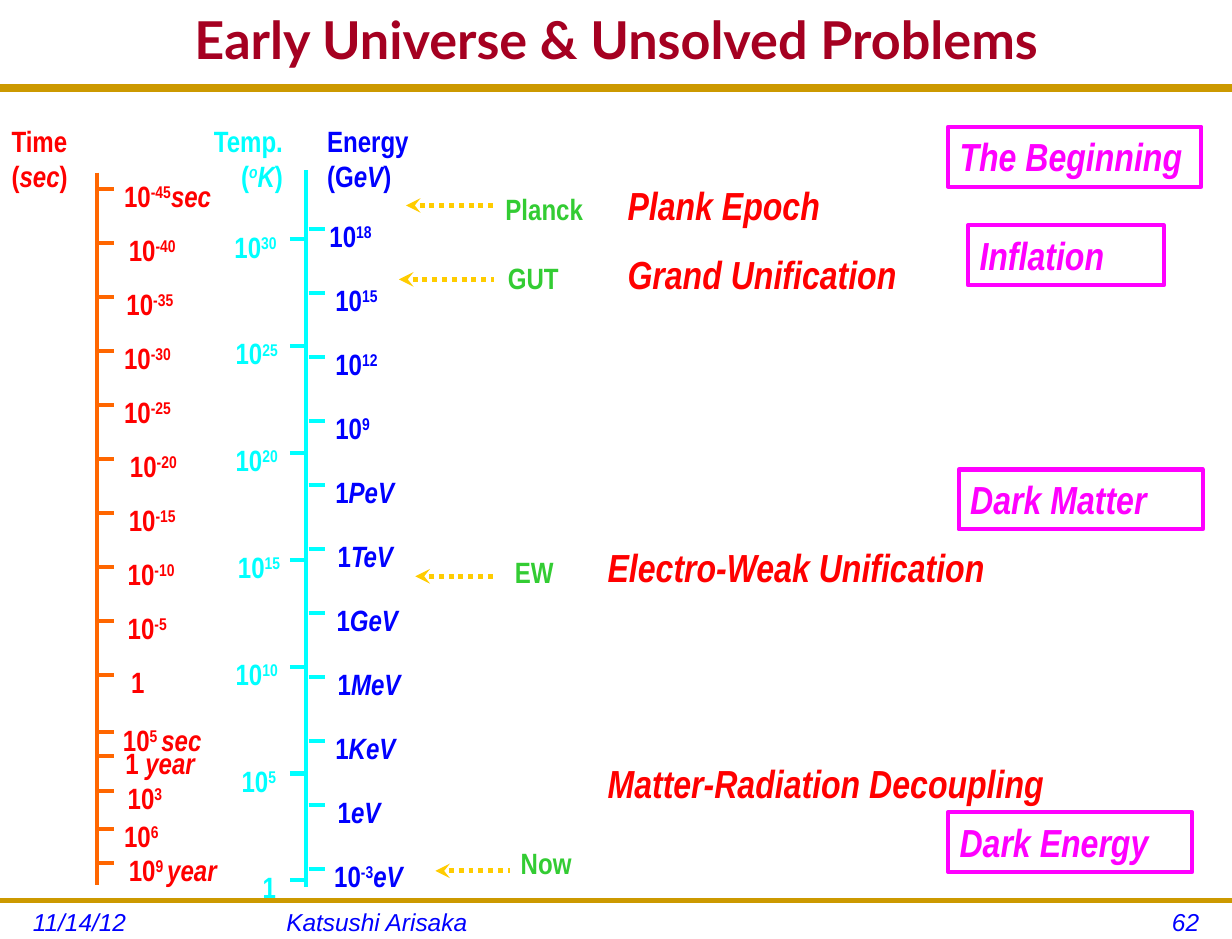
from dataclasses import dataclass

from lxml.etree import SubElement
from pptx import Presentation
from pptx.dml.color import RGBColor
from pptx.enum.dml import MSO_LINE
from pptx.enum.shapes import MSO_CONNECTOR, MSO_SHAPE
from pptx.enum.text import MSO_ANCHOR, MSO_AUTO_SIZE, PP_ALIGN
from pptx.oxml.ns import qn
from pptx.util import Inches, Pt


@dataclass(frozen=True)
class Theme:
    """Colours, fonts and type sizes of the slide."""
    rule: str = "CC9900"
    title: str = "A50021"
    footer: str = "0000FF"
    time: str = "FF0000"
    time_axis: str = "FF6600"
    temperature: str = "00FFFF"
    energy: str = "0000FF"
    arrow: str = "FFCC00"
    marker: str = "33CC33"
    epoch: str = "FF0000"
    problem: str = "FF00FF"
    title_font: str = "Lato"
    footer_font: str = "Arial"
    label_font: str = "Arial Narrow"
    title_size: float = 32
    footer_size: float = 15
    label_size: float = 18
    epoch_size: float = 24
    axis_width: float = 2.5


@dataclass(frozen=True)
class Box:
    """A region in inches, with places measured from its corner."""
    left: float
    top: float
    width: float
    height: float

    def at(self, x, y, width, height):
        """Return a smaller box at an offset inside this one."""
        return Box(self.left + x, self.top + y, width, height)

    def lengths(self):
        """Return left, top, width and height as slide lengths."""
        return [Inches(v) for v in (self.left, self.top, self.width, self.height)]


THEME = Theme()
LABEL_RISE = 0.14
TICK = 0.14


def format_run(run, size, font, color, bold=True, italic=False):
    """Set the type of one run."""
    run.font.size = Pt(size)
    run.font.name = font
    run.font.bold = bold
    run.font.italic = italic
    run.font.color.rgb = RGBColor.from_string(color)


def set_margins(frame, side=0.1):
    """Set wrapping and inner margins of a text frame."""
    frame.word_wrap = True
    frame.margin_left = frame.margin_right = Inches(side)
    frame.margin_top = frame.margin_bottom = Inches(0.05)


def add_label(slide, box, lines, color, align=PP_ALIGN.LEFT):
    """Add a label whose parts split at |, with ^ for raised and _ for italic."""
    frame = slide.shapes.add_textbox(*box.lengths()).text_frame
    set_margins(frame)
    frame.auto_size = MSO_AUTO_SIZE.SHAPE_TO_FIT_TEXT
    frame.text = "\n".join(lines)
    for paragraph, line in zip(frame.paragraphs, lines):
        paragraph.text = ""
        paragraph.alignment = align
        for part in line.split("|"):
            run = paragraph.add_run()
            run.text = part.lstrip("^_")
            format_run(run, THEME.label_size, THEME.label_font, color, italic="_" in part)
            if "^" in part:
                run.font._element.set("baseline", "30000")


def add_line(slide, box, color, width):
    """Add a straight line from the box's corner to its opposite corner."""
    left, top, across, down = box.lengths()
    line = slide.shapes.add_connector(
        MSO_CONNECTOR.STRAIGHT, left, top, left + across, top + down)
    line.line.color.rgb = RGBColor.from_string(color)
    line.line.width = Pt(width)
    SubElement(line._element.spPr, qn("a:effectLst"))
    return line


def add_heading(slide, box, text):
    """Place the title with the rule under it."""
    title = slide.shapes.title
    title.left, title.top, title.width, title.height = box.at(0.17, 0, 10.17, 0.75).lengths()
    frame = title.text_frame
    frame.text = text
    set_margins(frame, 0.11)
    frame.vertical_anchor = MSO_ANCHOR.MIDDLE
    paragraph = frame.paragraphs[0]
    paragraph.alignment = PP_ALIGN.CENTER
    paragraph.line_spacing = 0.8
    format_run(paragraph.runs[0], THEME.title_size, THEME.title_font, THEME.title)
    add_line(slide, box.at(0, box.height, box.width, 0), THEME.rule, 4.5)


def add_footer(slide, box, date, author, number):
    """Place the bottom rule with date, author and page number."""
    add_line(slide, box.at(0, 0, box.width, 0), THEME.rule, 3)
    for text, x, width, align in ((date, 0.17, 2.08, PP_ALIGN.LEFT),
                                  (author, 2.33, 6.08, PP_ALIGN.LEFT),
                                  (number, 8.5, 1.83, PP_ALIGN.RIGHT)):
        frame = slide.shapes.add_textbox(*box.at(x, 0.01, width, 0.32).lengths()).text_frame
        frame.text = text
        set_margins(frame, 0.11)
        frame.paragraphs[0].alignment = align
        format_run(frame.paragraphs[0].runs[0], THEME.footer_size, THEME.footer_font,
                   THEME.footer, bold=False, italic=True)


def add_ticks(slide, box, axis_x, offsets, rows, width, line_color, text_color):
    """Place one tick and one label for each (text, label x) row."""
    for y, (text, label_x) in zip(offsets, rows):
        add_line(slide, box.at(axis_x, y, TICK, 0), line_color, THEME.axis_width)
        add_label(slide, box.at(label_x, y - LABEL_RISE, width, 0.4), [text], text_color)


def add_time_scale(slide, box):
    """Draw the time axis with even decades, then the later ages."""
    add_label(slide, box.at(0, 0, 0.92, 0.7), ["Time", "(|_sec|)"], THEME.time)
    add_line(slide, box.at(0.83, 0.47, 0, 6.07), THEME.time_axis, THEME.axis_width)
    offsets = [0.61 + 0.46 * i for i in range(10)] + [5.24, 5.44, 5.74, 6.06, 6.35]
    rows = [("10|^-45|_sec", 0.96), ("10|^-40", 1), ("10|^-35", 0.98), ("10|^-30", 0.96),
            ("10|^-25", 0.96), ("10|^-20", 1.01), ("10|^-15", 1), ("10|^-10", 0.99),
            ("10|^-5", 0.99), ("1", 1.02), ("10|^5 |_sec", 0.95), ("1 |_year", 0.97),
            ("10|^3", 0.99), ("10|^6", 0.96), ("10|^9 |_year", 1)]
    add_ticks(slide, box, 0.83, offsets, rows, 1.13, THEME.time_axis, THEME.time)


def add_energy_scale(slide, box):
    """Draw the shared axis with temperature at its left and energy at its right."""
    axis_x = 1.11
    add_label(slide, box.at(0, 0, 1.01, 0.7), ["Temp.", "(|^_o|_K|)"],
              THEME.temperature, PP_ALIGN.RIGHT)
    add_label(slide, box.at(1.19, 0, 1.13, 0.7), ["Energy", "(G|_eV|)"], THEME.energy)
    add_line(slide, box.at(axis_x, 0.45, 0, 6.11), THEME.temperature, THEME.axis_width)
    energies = [("10|^18", 1.21), ("10|^15", 1.26), ("10|^12", 1.26), ("10|^9", 1.26),
                ("1|_PeV", 1.26), ("1|_TeV", 1.28), ("1|_GeV", 1.27), ("1|_MeV", 1.28),
                ("1|_KeV", 1.26), ("1|_eV", 1.28), ("10|^-3|_eV", 1.25)]
    add_ticks(slide, box, axis_x + 0.02, [0.95 + 0.545 * i for i in range(len(energies))],
              energies, 1.04, THEME.temperature, THEME.energy)
    temperatures = [("10|^30", 0.4), ("10|^25", 0.41), ("10|^20", 0.41), ("10|^15", 0.43),
                    ("10|^10", 0.41), ("10|^5", 0.46), ("1", 0.64)]
    add_ticks(slide, box, axis_x - TICK, [1.04 + 0.91 * i for i in range(len(temperatures))],
              temperatures, 0.78, THEME.temperature, THEME.temperature)


def add_markers(slide, box):
    """Place the dotted arrows that point at the scale, with their names."""
    for name, arrow_x, arrow_y, length, name_x, name_y in (
            ("Planck", 0.06, 0.75, 0.75, 0.81, 0.58), ("GUT", 0, 1.38, 0.81, 0.83, 1.17),
            ("EW", 0.14, 3.91, 0.67, 0.89, 3.67), ("Now", 0.31, 6.42, 0.64, 0.94, 6.15)):
        arrow = add_line(slide, box.at(arrow_x, arrow_y, length, 0), THEME.arrow, 3)
        arrow.line.dash_style = MSO_LINE.ROUND_DOT
        SubElement(arrow.line._get_or_add_ln(), qn("a:headEnd"), type="stealth")
        add_label(slide, box.at(name_x, name_y, 1, 0.4), [name], THEME.marker)


def add_topics(slide, box, topics, color, outlined):
    """Place large italic topics, framed or plain."""
    for text, x, y, width in topics:
        topic = slide.shapes.add_shape(
            MSO_SHAPE.RECTANGLE, *box.at(x, y, width, 0.51).lengths()
        ) if outlined else slide.shapes.add_textbox(*box.at(x, y, width, 0.5).lengths())
        if outlined:
            topic.shadow.inherit = False
            topic.fill.background()
            topic.line.color.rgb = RGBColor.from_string(color)
            topic.line.width = Pt(THEME.axis_width)
        frame = topic.text_frame
        frame.text = text
        set_margins(frame)
        frame.auto_size = MSO_AUTO_SIZE.SHAPE_TO_FIT_TEXT
        frame.vertical_anchor = MSO_ANCHOR.TOP
        frame.paragraphs[0].alignment = PP_ALIGN.LEFT
        format_run(frame.paragraphs[0].runs[0], THEME.epoch_size, THEME.label_font,
                   color, italic=True)


def main():
    """Build and save the slide."""
    deck = Presentation()
    deck.slide_width, deck.slide_height = Inches(10.5), Inches(8)
    slide = deck.slides.add_slide(deck.slide_layouts[5])
    add_heading(slide, Box(0, 0, 10.5, 0.75), "Early Universe & Unsolved Problems")
    add_footer(slide, Box(0, 7.67, 10.5, 0.33), "11/14/12", "Katsushi Arisaka", "62")
    add_time_scale(slide, Box(0, 1, 2.2, 6.6))
    add_energy_scale(slide, Box(1.5, 1, 2.4, 6.6))
    add_markers(slide, Box(3.4, 1, 1.8, 6.6))
    epochs = [("Plank Epoch", 0.17, 0.5, 3.23), ("Grand Unification", 0.17, 1.08, 3.23),
              ("Electro-Weak Unification", 0, 3.58, 4.5),
              ("Matter-Radiation Decoupling", 0, 5.42, 4.83)]
    add_topics(slide, Box(5.08, 1, 4.83, 6.6), epochs, THEME.epoch, False)
    problems = [("The Beginning", 0, 0.08, 2.16), ("Inflation", 0.17, 0.92, 1.67),
                ("Dark Matter", 0.09, 3, 2.08), ("Dark Energy", 0, 5.92, 2.08)]
    add_topics(slide, Box(8.08, 1, 2.17, 6.6), problems, THEME.problem, True)
    deck.save("out.pptx")


if __name__ == "__main__":
    main()
